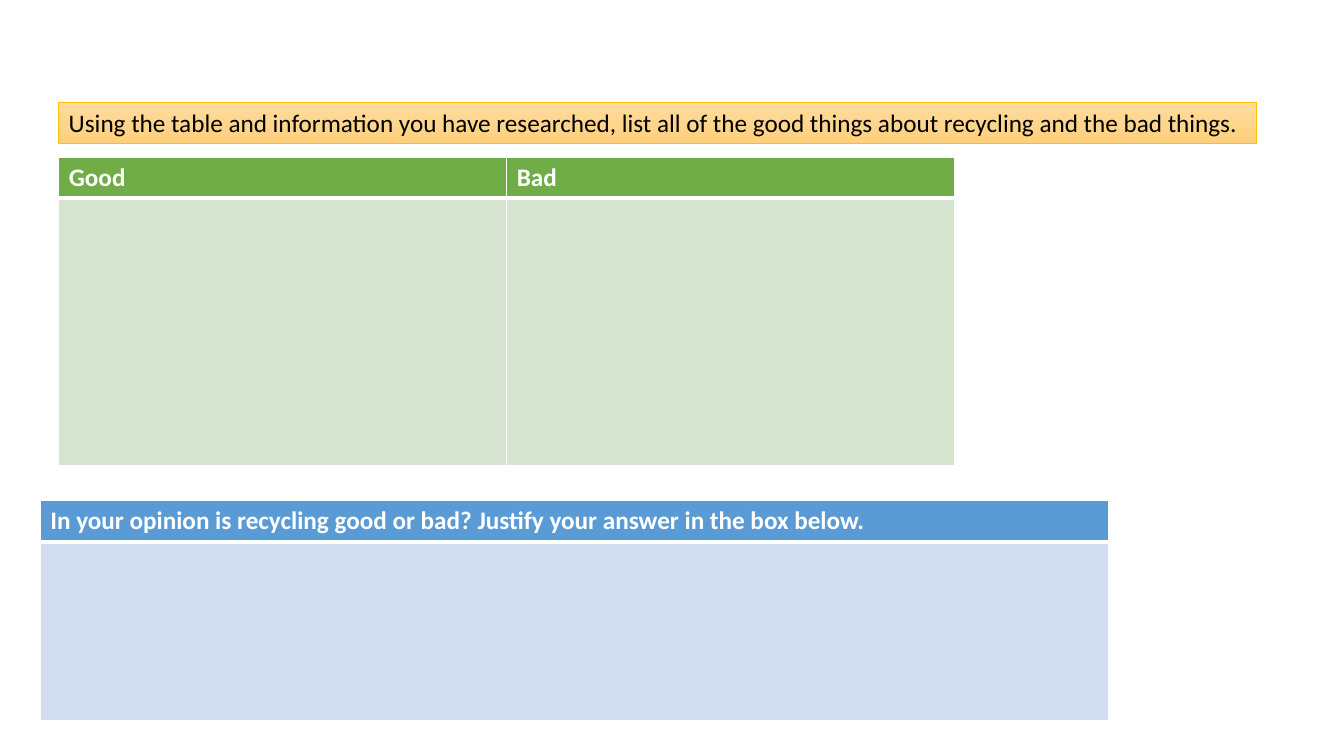
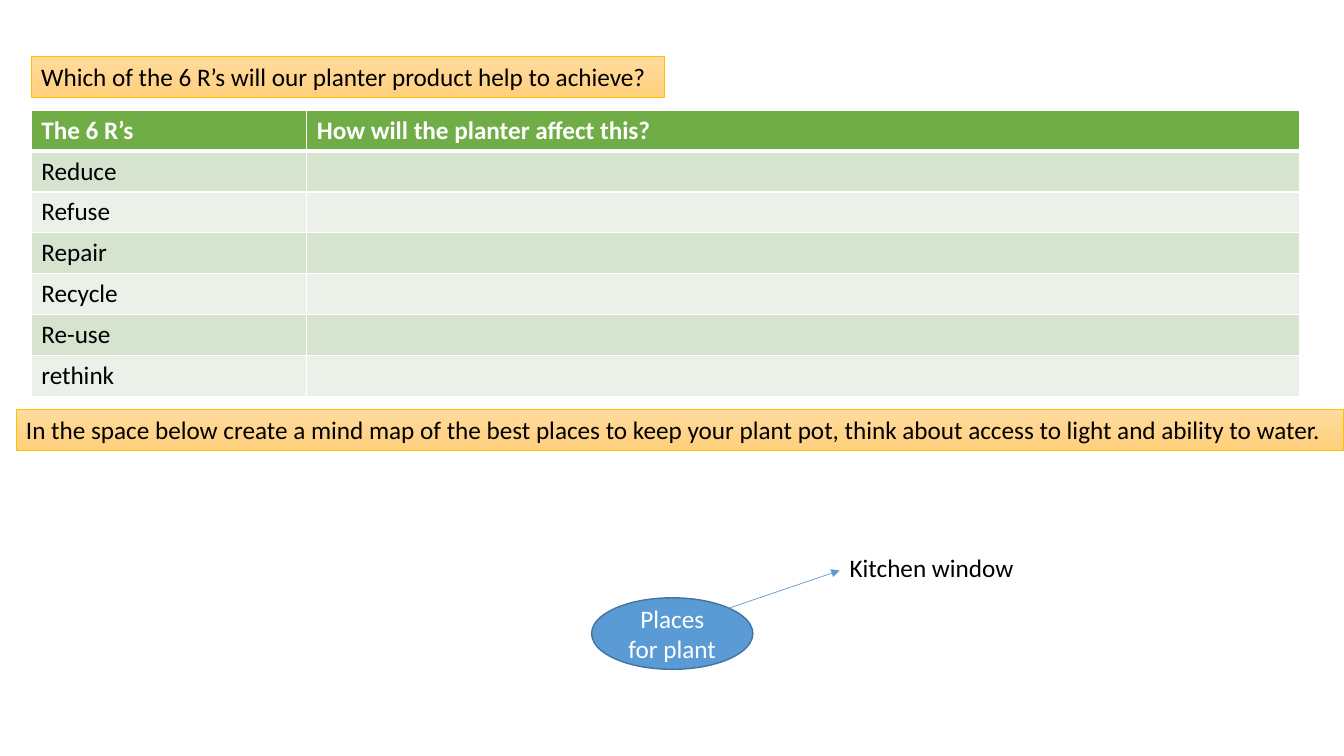
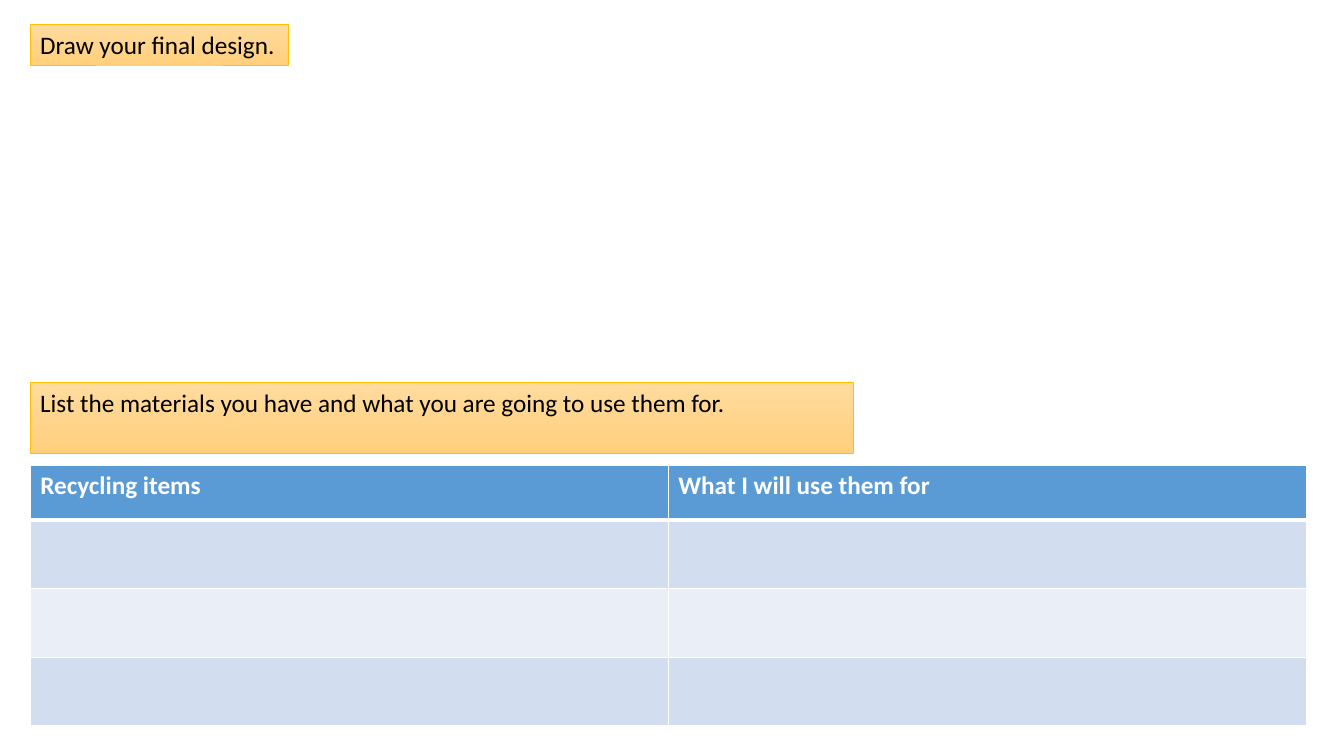
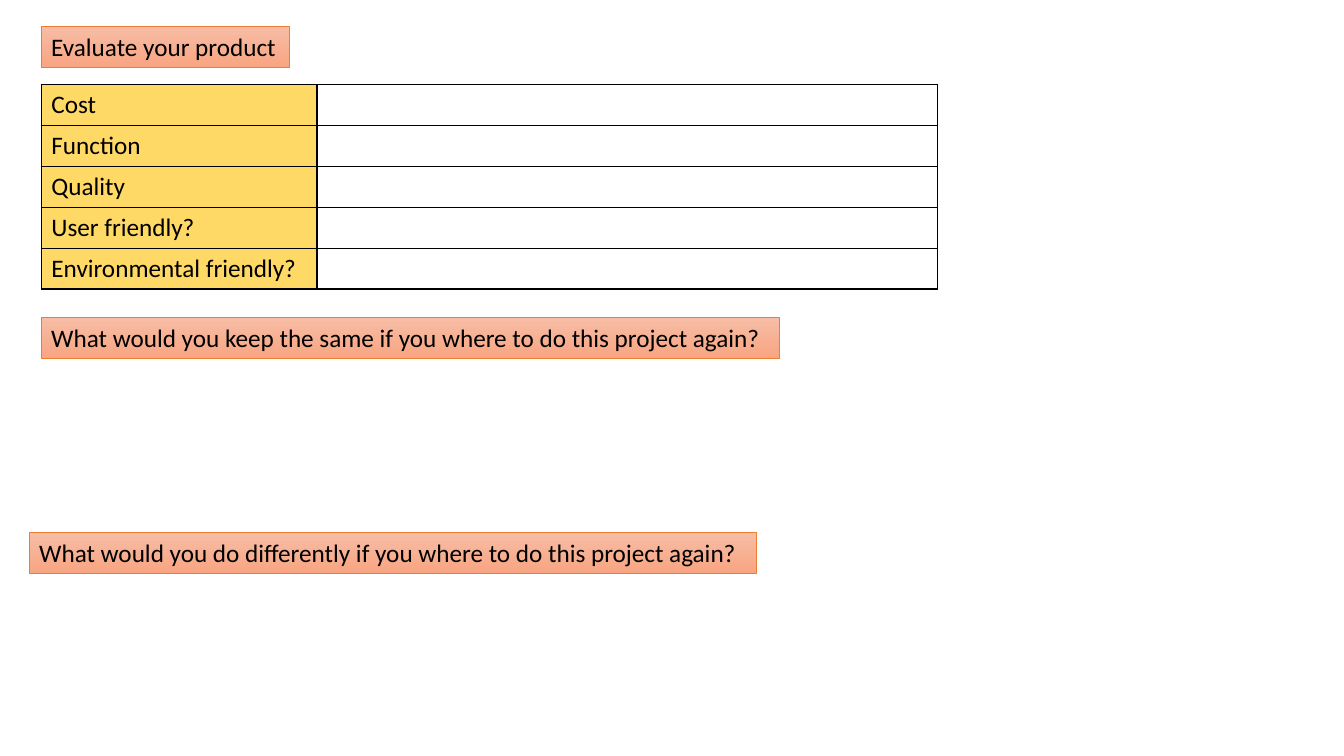
from pptx import Presentation
from pptx.dml.color import RGBColor
from pptx.enum.dml import MSO_LINE
from pptx.enum.shapes import MSO_CONNECTOR, MSO_SHAPE
from pptx.enum.text import MSO_ANCHOR, MSO_AUTO_SIZE, PP_ALIGN
from pptx.oxml.ns import qn
from pptx.util import Pt
from lxml import etree

STRAIGHT = MSO_CONNECTOR.STRAIGHT
OVAL = MSO_SHAPE.OVAL
SOLID = MSO_LINE.SOLID
MIDDLE = MSO_ANCHOR.MIDDLE
GROW = MSO_AUTO_SIZE.SHAPE_TO_FIT_TEXT
FIXED = MSO_AUTO_SIZE.NONE
LEFT, CENTER = PP_ALIGN.LEFT, PP_ALIGN.CENTER

FONT = "Calibri"
TEXT_SIZE = 18
ROW = 29.2
LABEL_COLUMN = 196.9
WHITE, BLACK = "FFFFFF", "000000"
BLUE, BLUE_EDGE, YELLOW = "5B9BD5", "43739E", "FFD966"
GREEN_TABLE = {"header": "70AD47", "bands": ("D5E3CF", "EBF1E9")}
BLUE_TABLE = {"header": BLUE, "bands": ("D2DEEF", "EAEFF7")}
GOLD = {"stops": ("FFDB9E", "FFD07C"), "edge": "FFC000"}
ORANGE = {"stops": ("F7BDA5", "F8A582"), "edge": "ED7D31"}


def rgb(value):
    """Turn a hex string into a colour."""
    return RGBColor.from_string(value)


def write(text_frame, text, color=BLACK, bold=False, alignment=LEFT):
    """Put text in a frame and format it in the shared style."""
    text_frame.text = text
    for paragraph in text_frame.paragraphs:
        paragraph.alignment = alignment
        for run in paragraph.runs:
            run.font.name = FONT
            run.font.size = Pt(TEXT_SIZE)
            run.font.bold = bold
            run.font.color.rgb = rgb(color)


def set_line(line, color, width):
    """Give a line its colour and width."""
    line.color.rgb = rgb(color)
    line.width = Pt(width)


def add_text(slide, text, left, top, width, height=ROW, fitted=True):
    """Add a text box that hugs one line, or keeps its size and wraps."""
    box = slide.shapes.add_textbox(Pt(left), Pt(top), Pt(width), Pt(height))
    write(box.text_frame, text)
    box.text_frame.word_wrap = not fitted
    box.text_frame.auto_size = GROW if fitted else FIXED
    return box


def add_prompt(slide, text, left, top, width, height=ROW, theme=GOLD, fitted=True):
    """Add an instruction on a band with a vertical gradient."""
    box = add_text(slide, text, left, top, width, height, fitted)
    box.fill.gradient()
    box.fill.gradient_angle = 270
    for stop, color in zip(box.fill.gradient_stops, theme["stops"]):
        stop.color.rgb = rgb(color)
    set_line(box.line, theme["edge"], 0.5)


def set_borders(cell, color, top=1, bottom=1):
    """Draw the four borders of a cell."""
    properties = cell._tc.get_or_add_tcPr()
    for side, width in (("L", 1), ("R", 1), ("T", top), ("B", bottom)):
        border = etree.SubElement(properties, qn(f"a:ln{side}"), w=str(Pt(width)))
        fill = etree.SubElement(border, qn("a:solidFill"))
        etree.SubElement(fill, qn("a:srgbClr"), val=color)


def add_grid(slide, left, top, columns, rows):
    """Add a table with the given column widths and row heights."""
    frame = slide.shapes.add_table(len(rows), len(columns), Pt(left), Pt(top),
                                   Pt(sum(columns)), Pt(sum(rows)))
    table = frame.table
    table.horz_banding = False
    for column, width in zip(table.columns, columns):
        column.width = Pt(width)
    for row, height in zip(table.rows, rows):
        row.height = Pt(height)
    return table


def add_banded_table(slide, left, top, columns, rows, headers, theme, labels=()):
    """Add a table with a header row, banded rows and optional row labels."""
    table = add_grid(slide, left, top, columns, rows)
    for cell, header in zip(table.rows[0].cells, headers):
        set_borders(cell, WHITE, bottom=3)
        cell.fill.solid()
        cell.fill.fore_color.rgb = rgb(theme["header"])
        write(cell.text_frame, header, WHITE, bold=True)
    for index in range(1, len(rows)):
        for cell in table.rows[index].cells:
            set_borders(cell, WHITE, top=3 if index == 1 else 1)
            cell.fill.solid()
            cell.fill.fore_color.rgb = rgb(theme["bands"][(index - 1) % 2])
    for index, label in enumerate(labels, start=1):
        write(table.cell(index, 0).text_frame, label)


def add_form_table(slide, left, top, columns, labels):
    """Add a ruled form with coloured labels and blank answers."""
    table = add_grid(slide, left, top, columns, [ROW] * len(labels))
    table.first_row = False
    for row, label in zip(table.rows, labels):
        label_cell, answer_cell = row.cells
        set_borders(label_cell, BLACK)
        set_borders(answer_cell, BLACK)
        label_cell.fill.solid()
        label_cell.fill.fore_color.rgb = rgb(YELLOW)
        answer_cell.fill.background()
        write(label_cell.text_frame, label)


def add_topic(slide, text, left, top, width, height):
    """Add the oval at the centre of a mind map."""
    oval = slide.shapes.add_shape(OVAL, Pt(left), Pt(top), Pt(width), Pt(height))
    oval.shadow.inherit = False
    oval.fill.solid()
    oval.fill.fore_color.rgb = rgb(BLUE)
    set_line(oval.line, BLUE_EDGE, 1)
    oval.text_frame.word_wrap = True
    oval.text_frame.vertical_anchor = MIDDLE
    write(oval.text_frame, text, WHITE, alignment=CENTER)


def add_arrow(slide, start, end):
    """Add a thin arrow from start to end."""
    arrow = slide.shapes.add_connector(STRAIGHT, *map(Pt, start + end))
    set_line(arrow.line, BLUE, 0.5)
    arrow.line.dash_style = SOLID
    properties = arrow._element.spPr
    etree.SubElement(properties.find(qn("a:ln")), qn("a:tailEnd"), type="triangle")
    etree.SubElement(properties, qn("a:effectLst"))


def build_opinion(slide):
    """Build the slide that weighs up recycling."""
    add_banded_table(slide, 42, 112.4, [320, 320], [ROW, 190.8],
                     ["Good", "Bad"], GREEN_TABLE)
    add_prompt(slide, "Using the table and information you have researched, "
               "list all of the good things about recycling and the bad things.",
               42, 73.4, 855.4)
    add_banded_table(slide, 28.8, 357.8, [763.2], [ROW, 127.4],
                     ["In your opinion is recycling good or bad? "
                      "Justify your answer in the box below."], BLUE_TABLE)


def build_planter(slide):
    """Build the slide on the 6 R’s and the mind map."""
    labels = ["Reduce", "Refuse", "Repair", "Recycle", "Re-use", "rethink"]
    add_prompt(slide, "Which of the 6 R’s will our planter product help to achieve?",
               22.3, 40.3, 452.2)
    add_banded_table(slide, 22.3, 78.7, [LABEL_COLUMN, 709.4],
                     [ROW] * (len(labels) + 1),
                     ["The 6 R’s", "How will the planter affect this?"],
                     GREEN_TABLE, labels)
    add_prompt(slide, "In the space below create a mind map of the best places to keep "
               "your plant pot, think about access to light and ability to water.",
               11.5, 292.3, 948.2)
    add_topic(slide, "Places for plant", 422.6, 427, 115.2, 51.1)
    add_arrow(slide, (521.3, 434.2), (599.8, 407.5))
    add_text(slide, "Kitchen window", 599.8, 391, 133.2)


def build_design(slide):
    """Build the slide for the design and its materials."""
    add_prompt(slide, "Draw your final design.", 21.6, 17.3, 184.3)
    add_banded_table(slide, 21.6, 332.6, [455.8] * 2, [38.9] + [49] * 3,
                     ["Recycling items", "What I will use them for"], BLUE_TABLE)
    add_prompt(slide, "List the materials you have and what you are going to use them for.",
               21.6, 272.9, 588.2, 51.1, fitted=False)


def build_evaluation(slide):
    """Build the slide that evaluates the product."""
    add_form_table(slide, 29.5, 60.5, [LABEL_COLUMN, 443.5],
                   ["Cost", "Function", "Quality", "User friendly?",
                    "Environmental friendly?"])
    for text, left, top, width in (
        ("Evaluate your product", 29.5, 18.7, 177.1),
        ("What would you keep the same if you where to do this project again?",
         29.5, 226.8, 527),
        ("What would you do differently if you where to do this project again?",
         20.9, 380.2, 519.1),
    ):
        add_prompt(slide, text, left, top, width, theme=ORANGE)


def main():
    """Build and save the presentation."""
    presentation = Presentation()
    presentation.slide_width, presentation.slide_height = Pt(960), Pt(540)
    blank = presentation.slide_layouts.get_by_name("Blank")
    for build in (build_opinion, build_planter, build_design, build_evaluation):
        build(presentation.slides.add_slide(blank))
    presentation.save("out.pptx")


if __name__ == "__main__":
    main()
